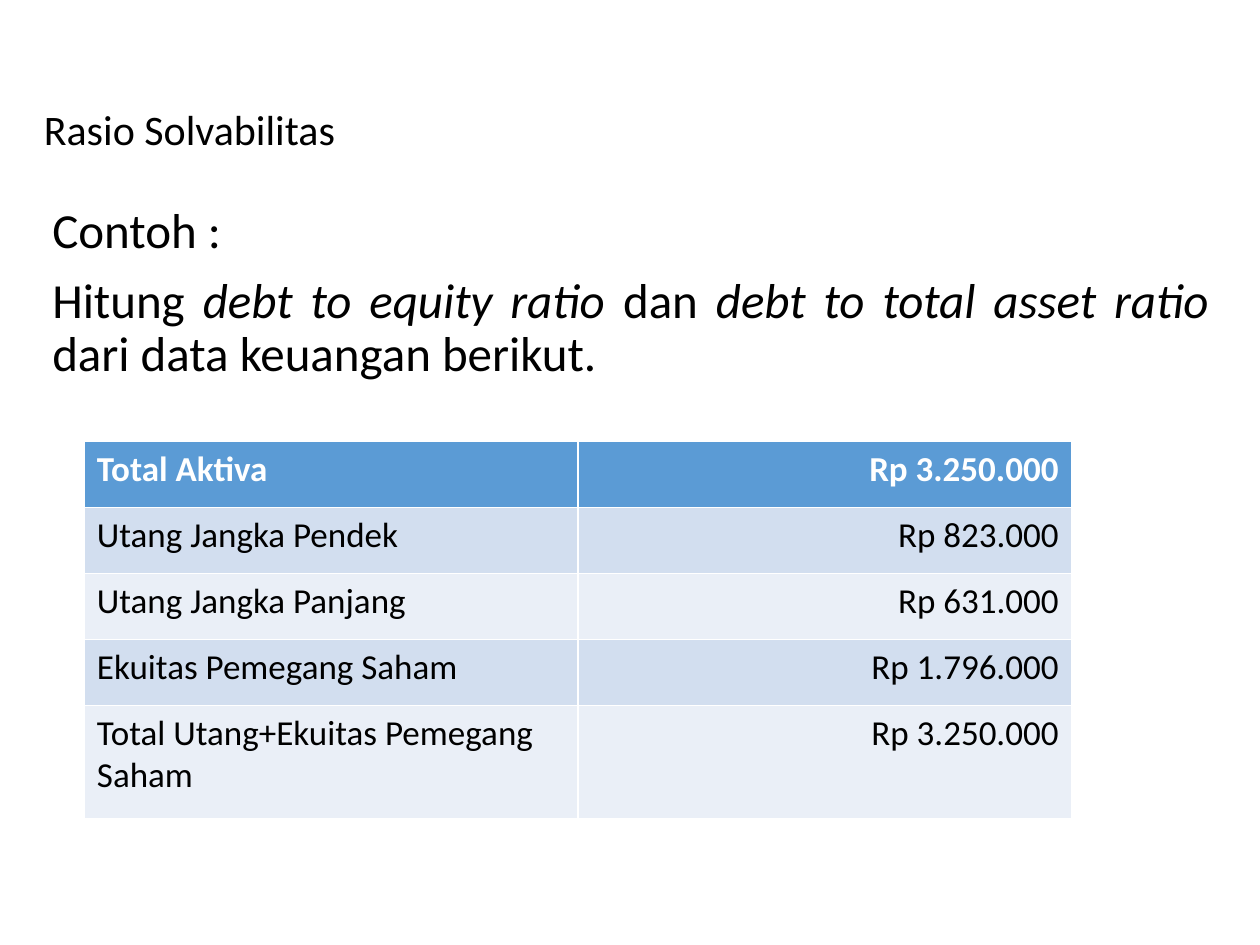
import dataclasses

import lxml.etree
import pptx
import pptx.dml.color
import pptx.enum.text
import pptx.oxml.ns
import pptx.util

Cm = pptx.util.Cm
ALIGN = pptx.enum.text.PP_ALIGN


@dataclasses.dataclass(frozen=True)
class Theme:
    """Colours, font and type sizes of the slide."""
    font: str = "Calibri"
    text: str = "000000"
    header_text: str = "FFFFFF"
    header_fill: str = "5B9BD5"
    band_fills: tuple = ("D2DEEF", "EAEFF7")
    title_size: int = 24
    body_size: int = 28
    table_size: int = 20


THEME = Theme()
EXAMPLE = [
    (ALIGN.LEFT, [("Contoh :", False)]),
    (ALIGN.JUSTIFY, [
        ("Hitung ", False),
        ("debt to equity ratio ", True),
        ("dan ", False),
        ("debt to total asset ratio ", True),
        ("dari data keuangan berikut.", False),
    ]),
]
BALANCE = [
    ("Total Aktiva", "Rp 3.250.000"),
    ("Utang Jangka Pendek", "Rp 823.000"),
    ("Utang Jangka Panjang", "Rp 631.000"),
    ("Ekuitas Pemegang Saham", "Rp 1.796.000"),
    ("Total Utang+Ekuitas Pemegang Saham", "Rp 3.250.000"),
]


def rgb(value):
    """Turn a hex string into a colour."""
    return pptx.dml.color.RGBColor.from_string(value)


def add_text(paragraph, text, size, color=THEME.text, bold=False, italic=False, align=ALIGN.LEFT):
    """Append a formatted run to a paragraph and align the paragraph."""
    paragraph.alignment = align
    run = paragraph.add_run()
    run.text = text
    run.font.name = THEME.font
    run.font.size = pptx.util.Pt(size)
    run.font.bold = bold
    run.font.italic = italic
    run.font.color.rgb = rgb(color)


def place(shape, box):
    """Move a shape into a box of left, top, width and height."""
    shape.left, shape.top, shape.width, shape.height = box


def remove_bullet(paragraph):
    """Remove the bullet and hanging indent of a paragraph."""
    properties = paragraph._p.get_or_add_pPr()
    properties.set("marL", "0")
    properties.set("indent", "0")
    lxml.etree.SubElement(properties, pptx.oxml.ns.qn("a:buNone"))


def fill_title(shape, box):
    """Write the slide title in its placeholder."""
    place(shape, box)
    frame = shape.text_frame
    frame.vertical_anchor = pptx.enum.text.MSO_ANCHOR.MIDDLE
    frame.paragraphs[0].line_spacing = 0.9
    add_text(frame.paragraphs[0], "Rasio Solvabilitas", THEME.title_size)


def fill_body(shape, box):
    """Write the example's task in the body placeholder."""
    place(shape, box)
    frame = shape.text_frame
    frame.auto_size = pptx.enum.text.MSO_AUTO_SIZE.NONE
    for index, (align, parts) in enumerate(EXAMPLE):
        paragraph = frame.add_paragraph() if index else frame.paragraphs[0]
        paragraph.line_spacing = 0.9
        paragraph.space_before = pptx.util.Pt(10)
        remove_bullet(paragraph)
        for text, italic in parts:
            add_text(paragraph, text, THEME.body_size, italic=italic, align=align)


def add_balance_table(slide, box):
    """Add the balance table with a header, bands and a taller last row."""
    height = box[3]
    row_height = Cm(1.33)
    table = slide.shapes.add_table(len(BALANCE), len(BALANCE[0]), *box).table
    for row_index, texts in enumerate(BALANCE):
        header = row_index == 0
        last = row_index == len(BALANCE) - 1
        table.rows[row_index].height = height - row_height * row_index if last else row_height
        fill = THEME.header_fill if header else THEME.band_fills[(row_index - 1) % 2]
        color = THEME.header_text if header else THEME.text
        for column_index, text in enumerate(texts):
            cell = table.cell(row_index, column_index)
            cell.fill.solid()
            cell.fill.fore_color.rgb = rgb(fill)
            align = ALIGN.RIGHT if column_index else ALIGN.LEFT
            add_text(cell.text_frame.paragraphs[0], text, THEME.table_size,
                     color=color, bold=header, align=align)


def main():
    """Build and save the presentation."""
    presentation = pptx.Presentation()
    presentation.slide_width, presentation.slide_height = Cm(25.4), Cm(19.05)
    slide = presentation.slides.add_slide(presentation.slide_layouts[1])
    fill_title(slide.shapes.title, (Cm(0.63), Cm(1.06), Cm(14.82), Cm(3.18)))
    fill_body(slide.placeholders[1], (Cm(0.8), Cm(4.02), Cm(23.82), Cm(13.5)))
    add_balance_table(slide, (Cm(1.7), Cm(8.9), Cm(19.9), Cm(7.6)))
    presentation.save("out.pptx")


if __name__ == "__main__":
    main()
